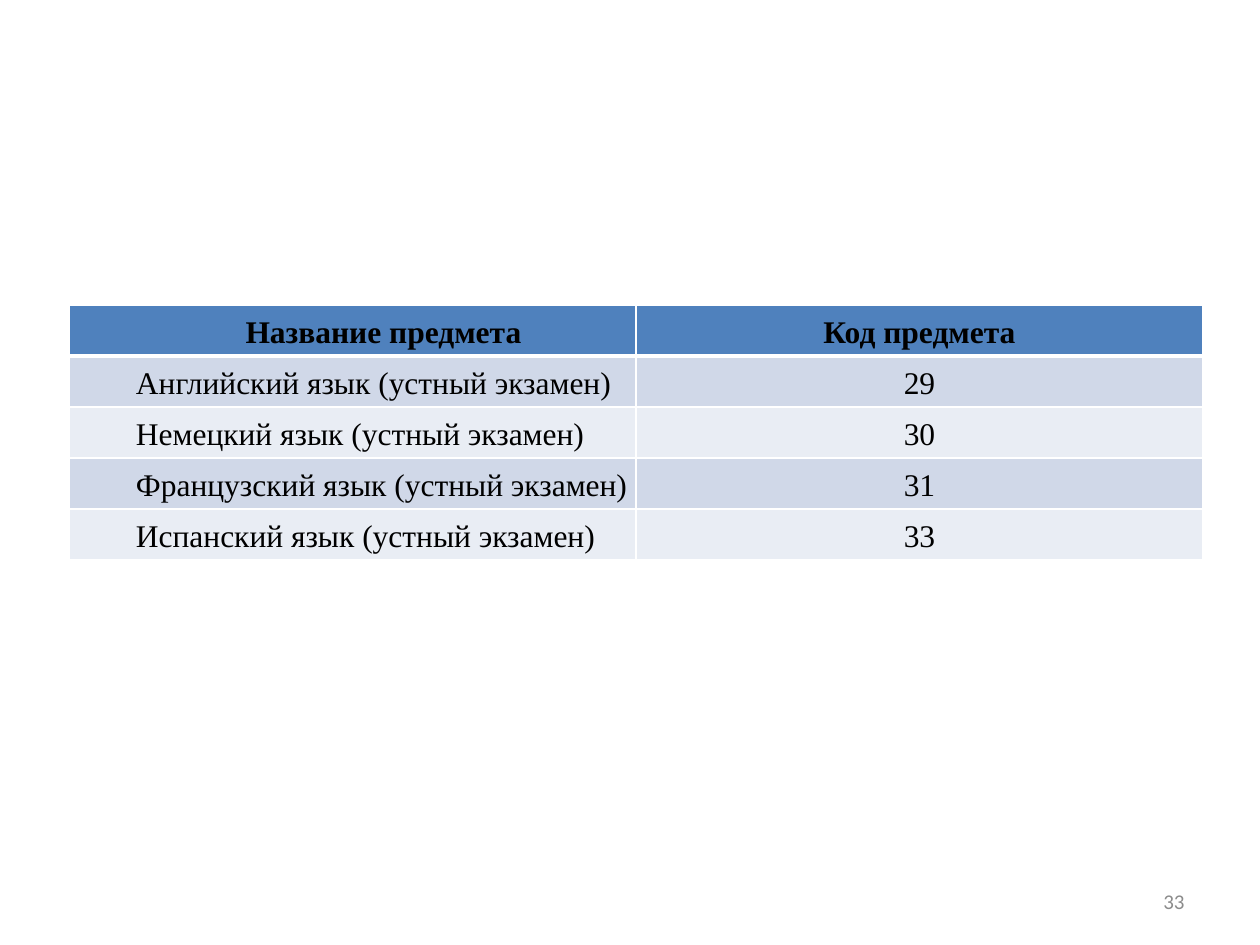
from dataclasses import dataclass

from lxml.etree import SubElement
from pptx import Presentation
from pptx.dml.color import RGBColor
from pptx.enum.text import MSO_ANCHOR, PP_ALIGN
from pptx.oxml.ns import qn
from pptx.util import Pt

PIXELS_PER_INCH = 126


def px(length: int) -> int:
    return round(length * 914400 / PIXELS_PER_INCH)


@dataclass(frozen=True)
class Theme:
    table_font: str = "Times New Roman"
    number_font: str = "Calibri"
    table_size: int = 18
    number_size: int = 12
    text: str = "000000"
    muted: str = "8C8C8C"
    header: str = "4F81BD"
    bands: tuple[str, str] = ("D0D8E8", "E9EDF4")
    border: str = "FFFFFF"


@dataclass(frozen=True)
class Subject:
    name: str
    code: str


THEME = Theme()
HEADINGS = Subject("Название предмета", "Код предмета")
SUBJECTS = [
    Subject("Английский язык (устный экзамен)", "29"),
    Subject("Немецкий язык (устный экзамен)", "30"),
    Subject("Французский язык (устный экзамен)", "31"),
    Subject("Испанский язык (устный экзамен)", "33"),
]
PAGE_NUMBER = "33"
TABLE_LEFT, TABLE_TOP = 69, 305
COLUMN_WIDTH, ROW_HEIGHT = 567, 51
CELL_MARGIN = 5
NAME_INDENT, CODE_INDENT = 62, -1


def write_text(frame, text: str, *, font: str = THEME.table_font,
               size: int = THEME.table_size, color: str = THEME.text,
               bold: bool = False, align=PP_ALIGN.LEFT,
               indent: int = 0, spacing: float = 1.0) -> None:
    para = frame.paragraphs[0]
    para.alignment = align
    para.line_spacing = spacing
    properties = para._p.get_or_add_pPr()
    properties.set("marL", "0")
    properties.set("indent", str(px(indent)))
    span = para.add_run()
    span.text = text
    span.font.name = font
    span.font.size = Pt(size)
    span.font.bold = bold
    span.font.color.rgb = RGBColor.from_string(color)


def set_borders(cell, bottom_width: int) -> None:
    """Outline a cell; call before its fill, which must follow the lines."""
    properties = cell._tc.get_or_add_tcPr()
    widths = {"a:lnL": 1, "a:lnR": 1, "a:lnT": 1, "a:lnB": bottom_width}
    for tag, width in widths.items():
        line = SubElement(properties, qn(tag), w=str(Pt(width)))
        fill = SubElement(line, qn("a:solidFill"))
        SubElement(fill, qn("a:srgbClr"), val=THEME.border)


def fill_row(cells, subject: Subject, fill: str, is_header: bool) -> None:
    name_align = PP_ALIGN.CENTER if is_header else PP_ALIGN.LEFT
    columns = [(subject.name, name_align, NAME_INDENT),
               (subject.code, PP_ALIGN.CENTER, CODE_INDENT)]
    for cell, (text, align, indent) in zip(cells, columns):
        set_borders(cell, bottom_width=3 if is_header else 1)
        cell.fill.solid()
        cell.fill.fore_color.rgb = RGBColor.from_string(fill)
        cell.margin_left = cell.margin_right = px(CELL_MARGIN)
        cell.margin_top = cell.margin_bottom = px(CELL_MARGIN)
        write_text(cell.text_frame, text, bold=is_header, align=align,
                   indent=indent, spacing=1.15)


def add_subject_table(page) -> None:
    entries = [HEADINGS, *SUBJECTS]
    table = page.shapes.add_table(
        len(entries), 2, px(TABLE_LEFT), px(TABLE_TOP),
        px(2 * COLUMN_WIDTH), px(len(entries) * ROW_HEIGHT)).table
    for column in table.columns:
        column.width = px(COLUMN_WIDTH)
    for index, (row, subject) in enumerate(zip(table.rows, entries)):
        row.height = px(ROW_HEIGHT)
        fill = THEME.bands[(index - 1) % 2] if index else THEME.header
        fill_row(row.cells, subject, fill, is_header=index == 0)


def add_page_number(page) -> None:
    box = page.shapes.add_textbox(px(903), px(876), px(294), px(50))
    box.text_frame.word_wrap = True
    box.text_frame.vertical_anchor = MSO_ANCHOR.MIDDLE
    write_text(box.text_frame, PAGE_NUMBER, font=THEME.number_font,
               size=THEME.number_size, color=THEME.muted, align=PP_ALIGN.RIGHT)


def main() -> None:
    deck = Presentation()
    deck.slide_width, deck.slide_height = px(1260), px(945)
    page = deck.slides.add_slide(deck.slide_layouts.get_by_name("Blank"))
    add_subject_table(page)
    add_page_number(page)
    deck.save("out.pptx")


if __name__ == "__main__":
    main()
